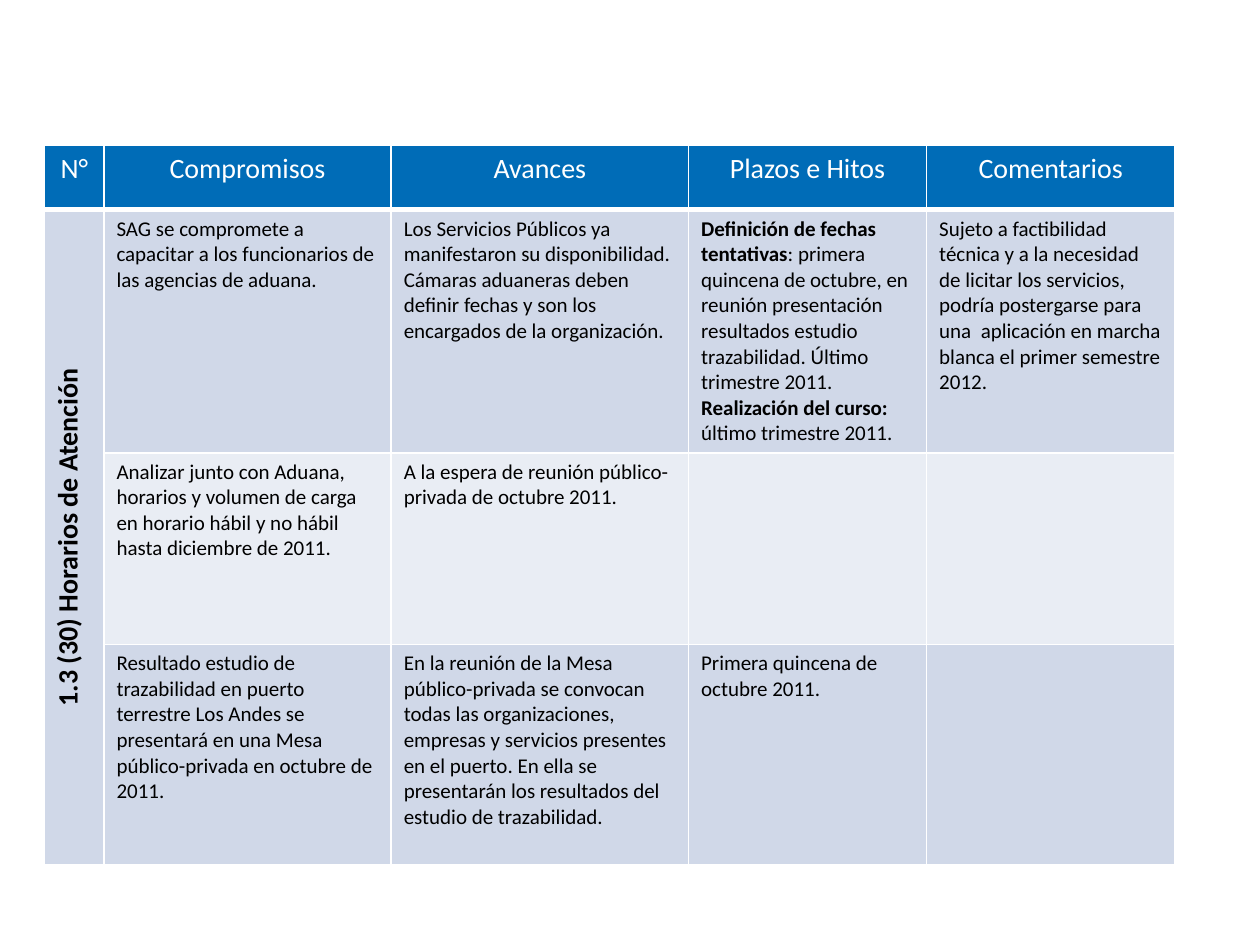
from dataclasses import dataclass

from lxml import etree
from pptx import Presentation
from pptx import util as u
from pptx.dml import color
from pptx.enum import text
from pptx.oxml import ns


@dataclass(frozen=True)
class Theme:
    font: str = "Calibri"
    header_fill: str = "006CB7"
    bands: tuple = ("D0D8E8", "E9EDF4")
    light: str = "FFFFFF"
    dark: str = "000000"
    heading_size: int = 16
    body_size: int = 12
    thin: int = 1
    thick: int = 3


class SlideBuilder:
    """Holds the theme and the current slide; lengths are grid units."""

    COLUMNS, ROWS = 100, 75

    def __init__(self, deck, theme):
        self.theme = theme
        self.slide = deck.slides.add_slide(deck.slide_layouts[6])
        self.unit_x = deck.slide_width / self.COLUMNS
        self.unit_y = deck.slide_height / self.ROWS

    def x(self, columns):
        return u.Emu(round(columns * self.unit_x))

    def y(self, rows):
        return u.Emu(round(rows * self.unit_y))

    def table(self, left, top, widths, heights):
        frame = self.slide.shapes.add_table(
            len(heights), len(widths), self.x(left), self.y(top),
            self.x(sum(widths)), self.y(sum(heights)))
        for column, width in zip(frame.table.columns, widths):
            column.width = self.x(width)
        for row, height in zip(frame.table.rows, heights):
            row.height = self.y(height)
        return frame.table

    def cell(self, cell, paragraphs, fill, bottom, align, **font):
        """Each paragraph is a list of (text, bold) runs."""
        cell.fill.solid()
        cell.fill.fore_color.rgb = color.RGBColor.from_string(fill)
        self.borders(cell, bottom)
        frame = cell.text_frame
        for index, runs in enumerate(paragraphs):
            para = frame.add_paragraph() if index else frame.paragraphs[0]
            para.alignment = align
            for words, bold in runs:
                span = para.add_run()
                span.text = words
                self.style(span.font, bold=bold, **font)

    def style(self, font, ink, size, bold):
        values = {"name": self.theme.font, "size": u.Pt(size), "bold": bold}
        for name, value in values.items():
            setattr(font, name, value)
        font.color.rgb = color.RGBColor.from_string(ink)

    def borders(self, cell, bottom):
        properties = cell._tc.get_or_add_tcPr()
        thin = self.theme.thin
        sides = {"a:lnL": thin, "a:lnR": thin, "a:lnT": thin, "a:lnB": bottom}
        for index, (tag, width) in enumerate(sides.items()):
            line = etree.Element(ns.qn(tag), w=str(u.Pt(width)))
            solid = etree.SubElement(line, ns.qn("a:solidFill"))
            etree.SubElement(solid, ns.qn("a:srgbClr"), val=self.theme.light)
            properties.insert(index, line)

    def header_cell(self, cell, words):
        theme = self.theme
        self.cell(cell, [[(words, False)]], theme.header_fill, theme.thick,
                  text.PP_ALIGN.CENTER, ink=theme.light,
                  size=theme.heading_size)

    def body_cell(self, cell, paragraphs, band):
        theme = self.theme
        self.cell(cell, paragraphs, theme.bands[band % 2], theme.thin,
                  text.PP_ALIGN.LEFT, ink=theme.dark, size=theme.body_size)

    def side_cell(self, cell, words):
        theme = self.theme
        self.cell(cell, [[(words, True)]], theme.bands[0], theme.thin,
                  text.PP_ALIGN.CENTER, ink=theme.dark,
                  size=theme.heading_size)
        cell._tc.get_or_add_tcPr().set("vert", "vert270")


HEADERS = ["N°", "Compromisos", "Avances", "Plazos e Hitos", "Comentarios"]
TOPIC = "1.3 (30) Horarios de Atención"
DEADLINES = [
    [("Definición de fechas tentativas", True),
     (": primera quincena de octubre, en reunión presentación resultados "
      "estudio trazabilidad. Último trimestre 2011.", False)],
    [("Realización del curso: ", True), ("último trimestre 2011.", False)],
]
COMMITMENTS = [
    ["SAG se compromete a capacitar a los funcionarios de las agencias de "
     "aduana.",
     "Los Servicios Públicos ya manifestaron su disponibilidad. Cámaras "
     "aduaneras deben definir fechas y son los encargados de la "
     "organización.",
     DEADLINES,
     "Sujeto a factibilidad técnica y a la necesidad de licitar los "
     "servicios, podría postergarse para una  aplicación en marcha blanca "
     "el primer semestre 2012."],
    ["Analizar junto con Aduana, horarios y volumen de carga en horario "
     "hábil y no hábil hasta diciembre de 2011.",
     "A la espera de reunión público-privada de octubre 2011.",
     None, None],
    ["Resultado estudio de trazabilidad en puerto terrestre Los Andes se "
     "presentará en una Mesa público-privada en octubre de 2011.",
     "En la reunión de la Mesa público-privada se convocan todas las "
     "organizaciones, empresas y servicios presentes en el puerto. En ella "
     "se presentarán los resultados del estudio de trazabilidad.",
     "Primera quincena de octubre 2011.",
     None],
]


def main():
    deck = Presentation()
    deck.slide_width, deck.slide_height = u.Inches(10), u.Inches(7.5)
    page = SlideBuilder(deck, Theme())

    # Commitments table
    table = page.table(3.55, 11.55, widths=[4.7, 22.8, 23.6, 18.9, 19.7],
                       heights=[5.1, 19.3, 15.2, 17.5])

    # Header row
    for column, words in enumerate(HEADERS):
        page.header_cell(table.cell(0, column), words)

    # Topic running up the side of all commitments
    table.cell(1, 0).merge(table.cell(len(COMMITMENTS), 0))
    page.side_cell(table.cell(1, 0), TOPIC)

    # Banded commitment rows
    for band, entries in enumerate(COMMITMENTS):
        for column, entry in enumerate(entries, start=1):
            if isinstance(entry, str):
                entry = [[(entry, False)]]
            page.body_cell(table.cell(band + 1, column), entry or [], band)

    deck.save("out.pptx")


if __name__ == "__main__":
    main()
